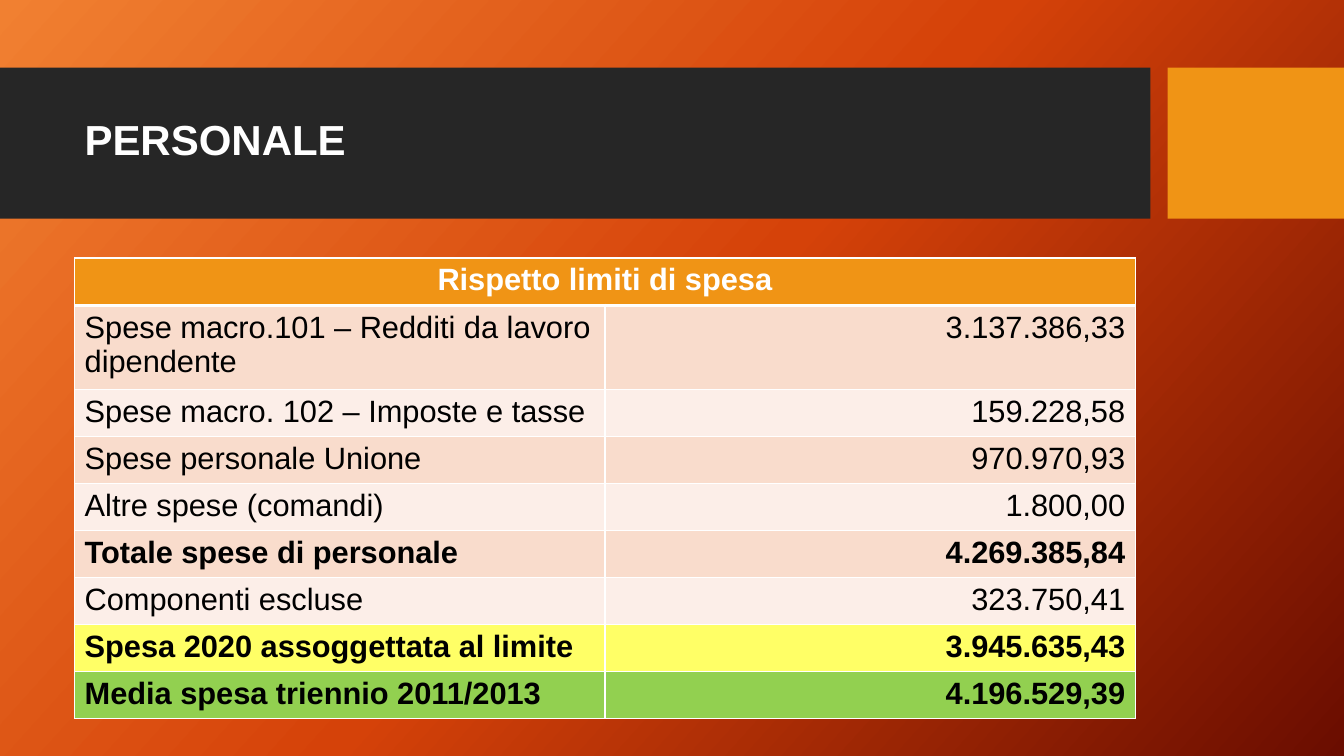
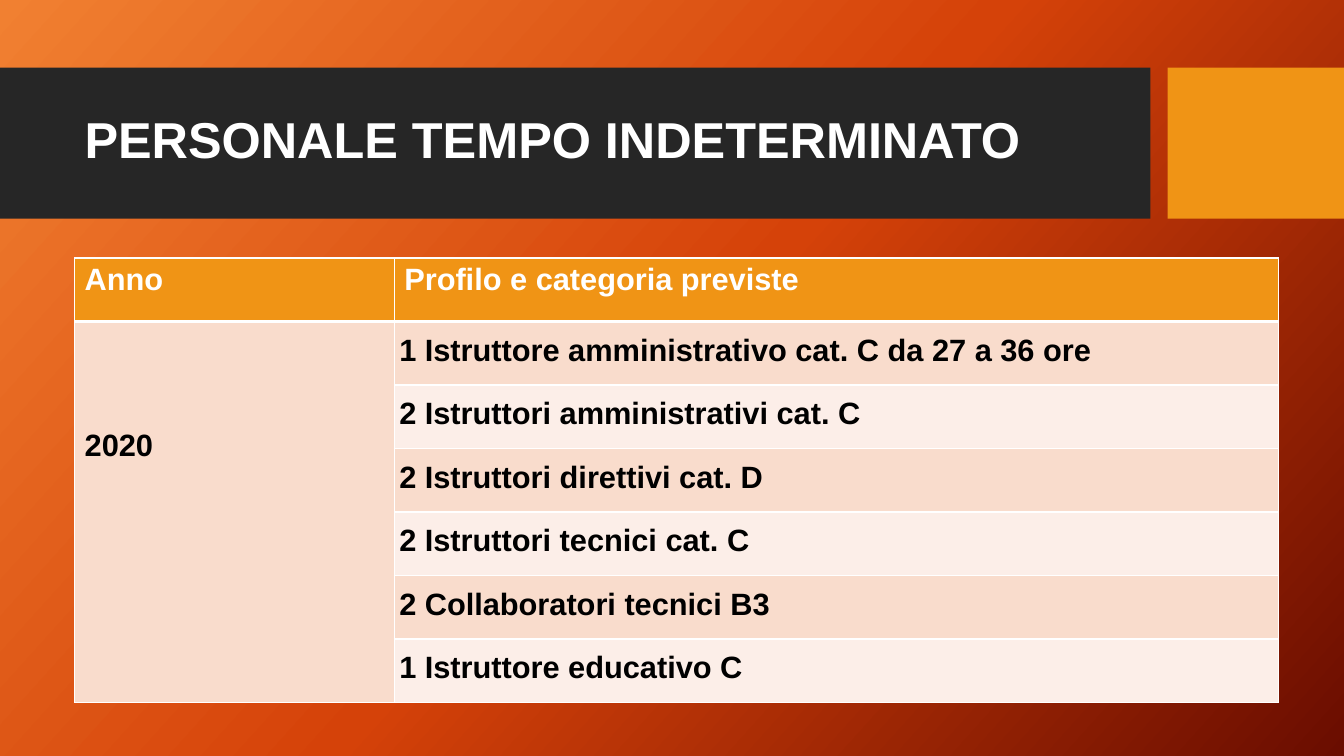
"""Build two slides on personnel spending and planned permanent hires."""
import copy

import pptx
import pptx.dml.color
import pptx.enum.shapes
import pptx.enum.text
import pptx.oxml
import pptx.oxml.ns
import pptx.util

Inches = pptx.util.Inches
Pt = pptx.util.Pt
ALIGN = pptx.enum.text.PP_ALIGN
qn = pptx.oxml.ns.qn

FONT = "Arial"
WHITE, BLACK, DARK, ORANGE = "FFFFFF", "000000", "262626", "F09415"
BANDS = ("F9DCCC", "FCEEE8")
YELLOW, GREEN = "FFFF66", "92D050"
GRADIENT = ((0, "F18031"), (0.5, "D54209"), (1, "6A0D00"))
LEFT, TABLE_TOP = 0.74, 2.56
BAND_TOP, BAND_HEIGHT = 0.67, 1.5
TABLE_SIZE = 22

SPENDING = (
    ("Spese macro.101 – Redditi da lavoro dipendente", "3.137.386,33"),
    ("Spese macro. 102 – Imposte e tasse", "159.228,58"),
    ("Spese personale Unione", "970.970,93"),
    ("Altre spese (comandi)", "1.800,00"),
    ("Totale spese di personale", "4.269.385,84"),
    ("Componenti escluse", "323.750,41"),
    ("Spesa 2020 assoggettata al limite", "3.945.635,43"),
    ("Media spesa triennio 2011/2013", "4.196.529,39"),
)
BOLD_ROWS = (5, 7, 8)
HIGHLIGHTS = {7: YELLOW, 8: GREEN}
HIRES = (
    "1 Istruttore amministrativo cat. C da 27 a 36 ore",
    "2 Istruttori amministrativi cat. C",
    "2 Istruttori direttivi cat. D",
    "2 Istruttori tecnici cat. C",
    "2 Collaboratori tecnici B3",
    "1 Istruttore educativo C",
)


def rgb(color):
    return pptx.dml.color.RGBColor.from_string(color)


def paint_background(master):
    fill = master.background.fill
    fill.gradient()
    fill.gradient_angle = 360 - 42
    gs_list = next(master.element.iter(qn("a:gsLst")))
    gs_list.append(copy.deepcopy(gs_list[-1]))
    for stop, (position, color) in zip(fill.gradient_stops, GRADIENT):
        stop.position = position
        stop.color.rgb = rgb(color)


def add_band(s, left, width, color):
    sp = s.shapes.add_shape(
        pptx.enum.shapes.MSO_SHAPE.RECTANGLE,
        Inches(left), Inches(BAND_TOP), Inches(width), Inches(BAND_HEIGHT))
    sp.shadow.inherit = False
    sp.fill.solid()
    sp.fill.fore_color.rgb = rgb(color)
    sp.line.fill.background()


def write(tf, text, size, color, bold=True, align=ALIGN.LEFT, spacing=None):
    tf.text = text
    p = tf.paragraphs[0]
    p.alignment = align
    p.line_spacing = spacing
    for r in p.runs:
        r.font.name = FONT
        r.font.size = Pt(size)
        r.font.bold = bold
        r.font.color.rgb = rgb(color)


def add_slide(prs, title, size):
    s = prs.slides.add_slide(prs.slide_layouts[6])
    add_band(s, 0, 11.41, DARK)
    add_band(s, 11.58, 1.75, ORANGE)
    sp = s.shapes.add_textbox(Inches(LEFT), Inches(0.82), Inches(10.51), Inches(1.18))
    tf = sp.text_frame
    tf.word_wrap = True
    tf.vertical_anchor = pptx.enum.text.MSO_ANCHOR.MIDDLE
    write(tf, title, size, WHITE, spacing=0.9)
    return s


def style_cell(cell, row, color):
    tc_pr = cell._tc.get_or_add_tcPr()
    widths = {"L": 1, "R": 1, "T": 3 if row == 1 else 1, "B": 3 if row == 0 else 1}
    for side, width in widths.items():
        tc_pr.append(pptx.oxml.parse_xml(
            f'<a:ln{side} {pptx.oxml.ns.nsdecls("a")} w="{Pt(width)}"><a:solidFill>'
            f'<a:srgbClr val="{WHITE}"/></a:solidFill></a:ln{side}>'))
    cell.fill.solid()
    cell.fill.fore_color.rgb = rgb(color)


def add_grid(s, col_widths, row_heights, highlights):
    table = s.shapes.add_table(
        len(row_heights), len(col_widths), Inches(LEFT), Inches(TABLE_TOP),
        Inches(sum(col_widths)), Inches(sum(row_heights))).table
    for column, width in zip(table.columns, col_widths):
        column.width = Inches(width)
    for i, height in enumerate(row_heights):
        table.rows[i].height = Inches(height)
        color = ORANGE if i == 0 else highlights.get(i, BANDS[(i - 1) % 2])
        for cell in table.rows[i].cells:
            style_cell(cell, i, color)
    return table


def spending_slide(prs):
    s = add_slide(prs, "PERSONALE", 30)
    heights = [0.47, 0.75] + [0.44] * (len(SPENDING) - 1)
    table = add_grid(s, [5.26] * 2, heights, HIGHLIGHTS)
    table.cell(0, 0).merge(table.cell(0, 1))
    write(table.cell(0, 0).text_frame, "Rispetto limiti di spesa",
          TABLE_SIZE, WHITE, align=ALIGN.CENTER)
    for i, entry in enumerate(SPENDING, 1):
        for j, (text, align) in enumerate(zip(entry, (ALIGN.LEFT, ALIGN.RIGHT))):
            write(table.cell(i, j).text_frame, text, TABLE_SIZE, BLACK,
                  bold=i in BOLD_ROWS, align=align)


def hires_slide(prs):
    s = add_slide(prs, "PERSONALE TEMPO INDETERMINATO", 36)
    table = add_grid(s, [3.17, 8.77], [0.63] * (len(HIRES) + 1), {})
    for j, text in enumerate(("Anno", "Profilo e categoria previste")):
        write(table.cell(0, j).text_frame, text, TABLE_SIZE, WHITE)
    year = table.cell(1, 0)
    year.merge(table.cell(len(HIRES), 0))
    year.margin_top = Inches(1.06)
    write(year.text_frame, "2020", TABLE_SIZE, BLACK)
    for i, text in enumerate(HIRES, 1):
        cell = table.cell(i, 1)
        cell.margin_left = cell.margin_right = Inches(0.05)
        write(cell.text_frame, text, TABLE_SIZE, BLACK,
              align=ALIGN.JUSTIFY, spacing=1.2)


def main():
    prs = pptx.Presentation()
    prs.slide_width = Inches(13.33)
    prs.slide_height = Inches(7.5)
    paint_background(prs.slide_master)
    spending_slide(prs)
    hires_slide(prs)
    prs.save("out.pptx")


if __name__ == "__main__":
    main()
